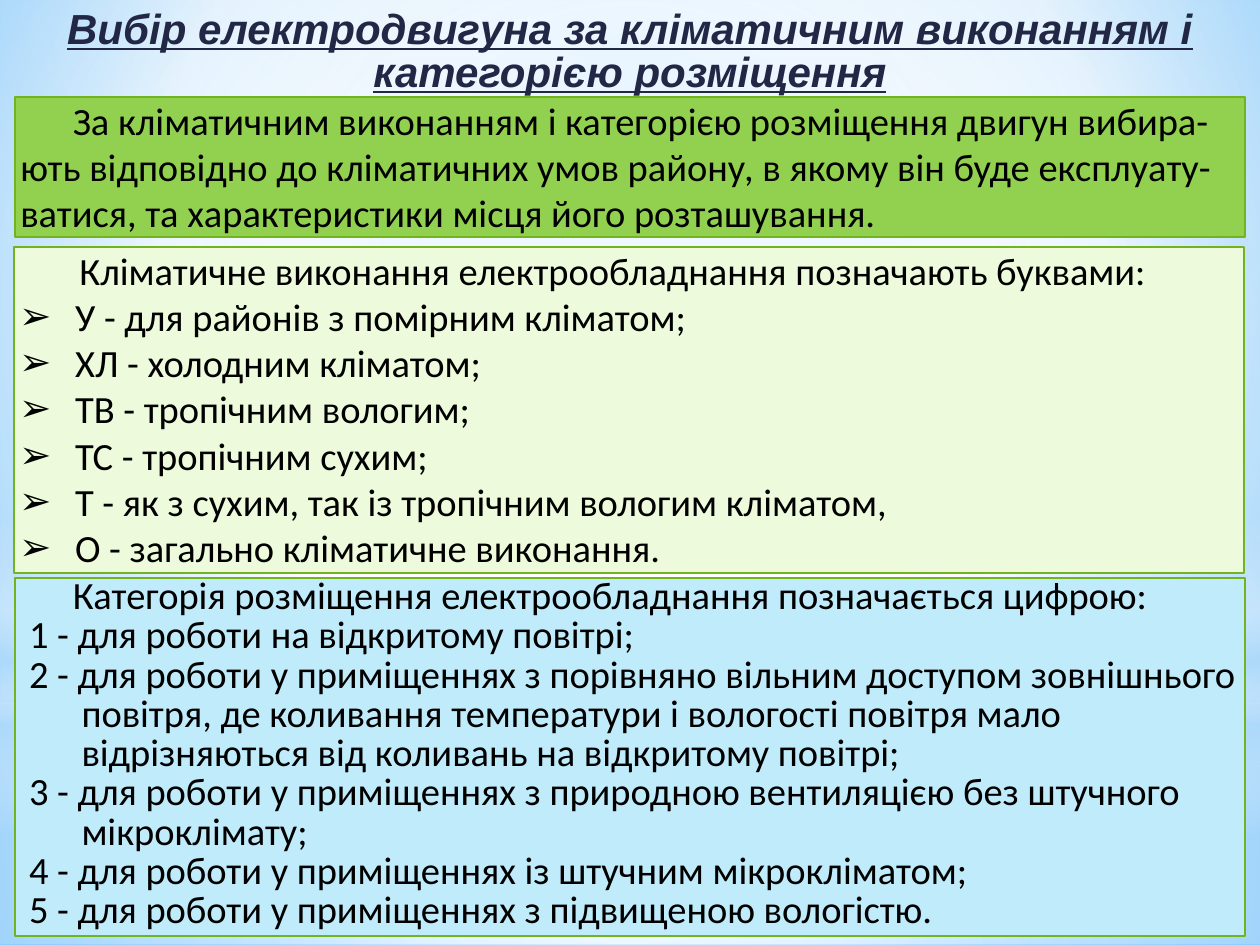
from dataclasses import dataclass

from lxml import etree
from pptx import Presentation
from pptx.dml.color import RGBColor
from pptx.enum import shapes, text
from pptx.oxml import ns
from pptx.util import Pt


@dataclass(frozen=True)
class Theme:
    title_font: str = "Arial"
    body_font: str = "Calibri"
    title_size: float = 24
    body_size: float = 22
    tight: float = 0.85
    title: str = "212745"
    ink: str = "000000"
    border: str = "72B41D"
    green: str = "92D050"
    pale_green: str = "EDFBDC"
    pale_blue: str = "BFEBFA"
    white: str = "FFFFFF"
    sky: str = "B4DCFA"
    bg_top: str = "9ED5FF"
    bg_edge: str = "5BB9FF"


T = Theme()
W, H = 720, 540
CENTRE = (50, 50, 50, 50)

TITLE = "Вибір електродвигуна за кліматичним виконанням і категорією розміщення"
INTRO = ("За кліматичним виконанням і категорією розміщення двигун вибира-ють "
         "відповідно до кліматичних умов району, в якому він буде експлуату-ватися, "
         "та характеристики місця його розташування.")
CLIMATE_HEAD = "Кліматичне виконання електрообладнання позначають буквами:"
CLIMATES = [
    "У - для районів з помірним кліматом;",
    "ХЛ - холодним кліматом;",
    "ТВ - тропічним вологим;",
    "ТС - тропічним сухим;",
    "Т - як з сухим, так із тропічним вологим кліматом,",
    "О - загально кліматичне виконання.",
]
PLACING_HEAD = "Категорія розміщення електрообладнання позначається цифрою:"
PLACINGS = [
    "1 - для роботи на відкритому повітрі;",
    "2 - для роботи у приміщеннях з порівняно вільним доступом зовнішнього повітря, "
    "де коливання температури і вологості повітря мало відрізняються від коливань "
    "на відкритому повітрі;",
    "3 - для роботи у приміщеннях з природною вентиляцією без штучного мікроклімату;",
    "4 - для роботи у приміщеннях із штучним мікрокліматом;",
    "5 - для роботи у приміщеннях з підвищеною вологістю.",
]


def set_gradient(fill, element, stops, focus=None):
    """Fill with (position, colour, alpha) stops, round a focus or downwards."""
    fill.solid()
    solid = element.find(".//" + ns.qn("a:solidFill"))
    grad = etree.Element(ns.qn("a:gradFill"), rotWithShape="1")
    gs_list = etree.SubElement(grad, ns.qn("a:gsLst"))
    for pos, colour, alpha in stops:
        gs = etree.SubElement(gs_list, ns.qn("a:gs"), pos=str(pos * 1000))
        clr = etree.SubElement(gs, ns.qn("a:srgbClr"), val=colour)
        etree.SubElement(clr, ns.qn("a:alpha"), val=str(alpha * 1000))
    if focus:
        shade = etree.SubElement(grad, ns.qn("a:path"), path="circle")
        etree.SubElement(shade, ns.qn("a:fillToRect"),
                         {side: str(v * 1000) for side, v in zip("ltrb", focus)})
    else:
        etree.SubElement(grad, ns.qn("a:lin"), ang="5400000", scaled="0")
    solid.getparent().replace(solid, grad)


def place(s, box):
    s.left, s.top, s.width, s.height = (Pt(v) for v in box)


def prepare_frame(s, inset=0):
    tf = s.text_frame
    tf.word_wrap = True
    tf.auto_size = text.MSO_AUTO_SIZE.NONE
    tf.vertical_anchor = text.MSO_ANCHOR.TOP
    tf.margin_left = tf.margin_right = Pt(inset)
    tf.margin_top = tf.margin_bottom = 0
    return tf


def write(p, words, font=T.body_font, size=T.body_size, colour=T.ink, strong=False,
          align=text.PP_ALIGN.LEFT, spacing=1.0, margin=0, indent=0, bullet=None):
    """Write one formatted paragraph."""
    p.alignment, p.line_spacing = align, spacing
    p.space_before = p.space_after = Pt(0)
    pPr = p._p.get_or_add_pPr()
    pPr.set("marL", str(Pt(margin)))
    pPr.set("indent", str(Pt(indent)))
    if bullet:
        etree.SubElement(pPr, ns.qn("a:buFont"), typeface=T.title_font)
        etree.SubElement(pPr, ns.qn("a:buChar"), char=bullet)
    else:
        etree.SubElement(pPr, ns.qn("a:buNone"))
    r = p.add_run()
    r.text = words
    f = r.font
    f.name, f.size, f.color.rgb = font, Pt(size), RGBColor.from_string(colour)
    f.bold = f.italic = f.underline = strong


def add_backdrop(slide, box):
    """Sky gradient with four soft layers, behind everything else."""
    x, y, w, h = box
    set_gradient(slide.background.fill, slide._element,
                 [(0, T.bg_top, 100), (60, T.white, 100), (100, T.bg_edge, 100)],
                 (20, 10, 20, 60))
    rect, oval = shapes.MSO_SHAPE.RECTANGLE, shapes.MSO_SHAPE.OVAL
    split = 402
    layers = [
        (rect, split, h - split,
         [(0, T.white, 91), (37, T.white, 76), (100, T.sky, 79)], CENTRE),
        (rect, 0, split,
         [(0, T.white, 89), (48, T.white, 62), (100, T.sky, 79)], CENTRE),
        (rect, 297, 180,
         [(0, T.white, 0), (29, T.white, 30), (45, T.sky, 40),
          (55, T.white, 26), (65, T.sky, 60), (100, T.white, 0)], None),
        (oval, 126, split, [(0, T.white, 100), (56, T.white, 0)], CENTRE),
    ]
    tree = slide.shapes._spTree
    for i, (kind, top, height, stops, focus) in enumerate(layers):
        s = slide.shapes.add_shape(kind, Pt(x), Pt(y + top), Pt(w), Pt(height))
        s.shadow.inherit = False
        s.line.fill.background()
        set_gradient(s.fill, s._element, stops, focus)
        tree.remove(s._element)
        tree.insert(2 + i, s._element)


def fill_title(s, box):
    place(s, box)
    write(prepare_frame(s).paragraphs[0], TITLE, font=T.title_font,
          size=T.title_size, colour=T.title, strong=True,
          align=text.PP_ALIGN.CENTER, spacing=T.tight)


def fill_panel(s, box, colour, lead, lead_indent, items=(), spacing=1.0, **item_format):
    """Bordered panel: an indented opening line, then its list."""
    place(s, box)
    s.fill.solid()
    s.fill.fore_color.rgb = RGBColor.from_string(colour)
    s.line.color.rgb = RGBColor.from_string(T.border)
    s.line.width = Pt(1.25)
    tf = prepare_frame(s, inset=3)
    write(tf.paragraphs[0], lead, indent=lead_indent, spacing=spacing)
    for item in items:
        write(tf.add_paragraph(), item, spacing=spacing, **item_format)


def main():
    prs = Presentation()
    prs.slide_width, prs.slide_height = Pt(W), Pt(H)
    slide = prs.slides.add_slide(prs.slide_layouts[3])
    left, width = 8.6, 702.8

    add_backdrop(slide, (0, 0, W, H))
    title, climate, placing = slide.placeholders
    fill_title(title, (left, 5.8, width, 49.7))

    # Opening statement
    intro = slide.shapes.add_shape(shapes.MSO_SHAPE.RECTANGLE, 0, 0, 0, 0)
    intro.shadow.inherit = False
    fill_panel(intro, (left, 55.4, width, 80), T.green, INTRO, 30)

    # Climate letters and placing digits
    fill_panel(climate, (left - 0.7, 141.1, width, 186.5), T.pale_green,
               CLIMATE_HEAD, 34.5, CLIMATES, margin=32, indent=-32, bullet="➢")
    fill_panel(placing, (left, 330.5, width, 204.5), T.pale_blue,
               PLACING_HEAD, 30, PLACINGS, spacing=T.tight, margin=35, indent=-30)

    prs.save("out.pptx")


if __name__ == "__main__":
    main()
